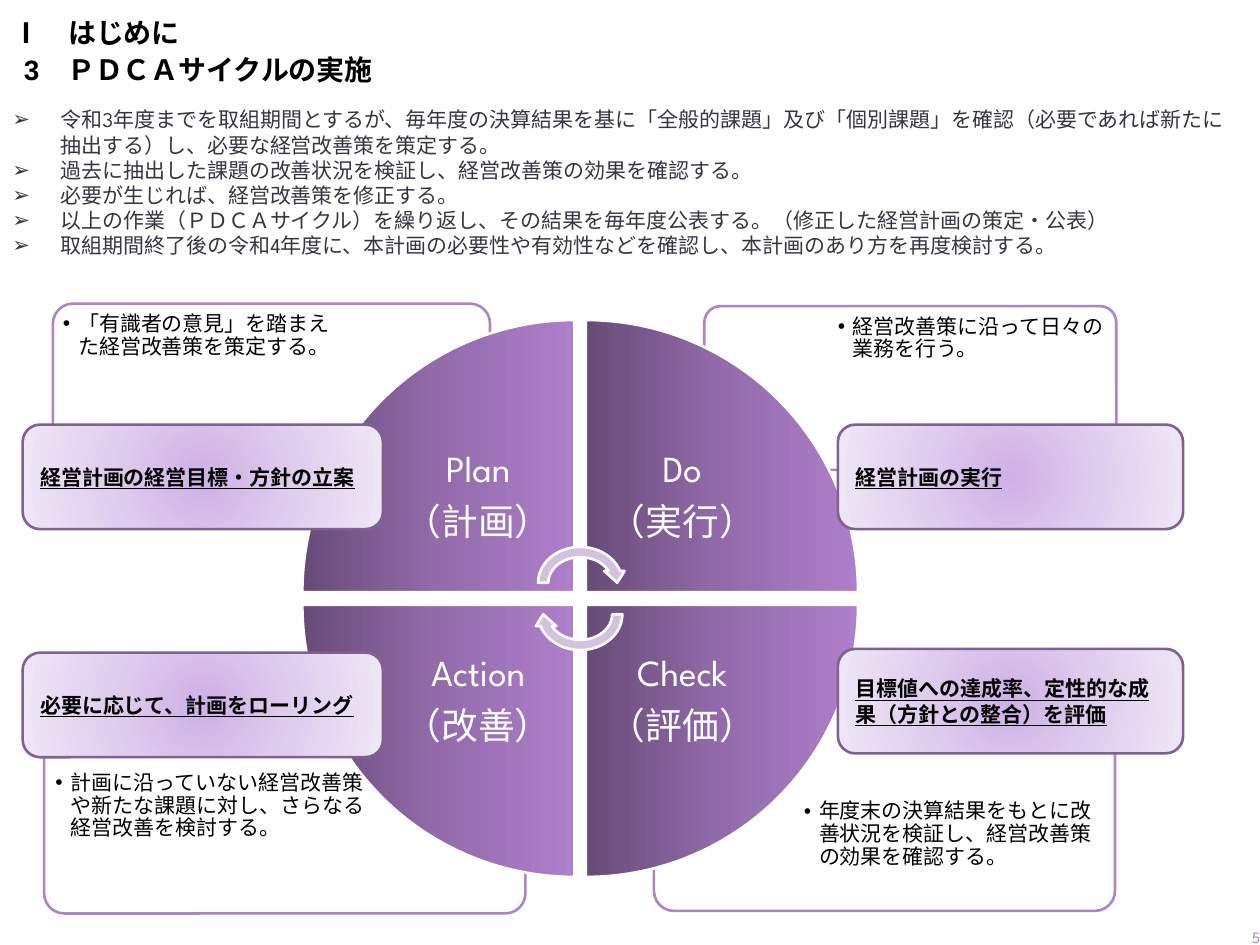
from lxml import etree
from pptx import Presentation
from pptx.dml.color import RGBColor
from pptx.enum.shapes import MSO_SHAPE
from pptx.enum.text import MSO_ANCHOR, PP_ALIGN
from pptx.oxml.ns import qn
from pptx.util import Inches, Pt

ROUNDED, WEDGE = MSO_SHAPE.ROUNDED_RECTANGLE, MSO_SHAPE.PIE_WEDGE
CYCLE_ARROW = MSO_SHAPE.CIRCULAR_ARROW
TOP, MIDDLE = MSO_ANCHOR.TOP, MSO_ANCHOR.MIDDLE
LEFT, CENTER, RIGHT = PP_ALIGN.LEFT, PP_ALIGN.CENTER, PP_ALIGN.RIGHT
JUSTIFY = PP_ALIGN.JUSTIFY

HEADING_FONT, BODY_FONT = "Arial", "League Spartan"
COLORS = {
    "black": "000000", "white": "FFFFFF", "body": "373545",
    "accent": "AD84C6", "arrow": "D3C2DF", "label_line": "806292",
}
WEDGE_STOPS = ((0, "674B78"), (50, "936BAB"), (100, "AE7FCB"))
LABEL_STOPS = ((0, "CFB0E6"), (50, "E0CEEE"), (100, "EFE7F6"))

POLICIES = [
    "令和3年度までを取組期間とするが、毎年度の決算結果を基に「全般的課題」及び「個別課題」を確認（必要であれば新たに抽出する）し、必要な経営改善策を策定する。",
    "過去に抽出した課題の改善状況を検証し、経営改善策の効果を確認する。",
    "必要が生じれば、経営改善策を修正する。",
    "以上の作業（ＰＤＣＡサイクル）を繰り返し、その結果を毎年度公表する。（修正した経営計画の策定・公表）",
    "取組期間終了後の令和4年度に、本計画の必要性や有効性などを確認し、本計画のあり方を再度検討する。",
]
# Frame box, text box, text anchor, text
DETAILS = [
    ((5.19, 5.63, 3.66, 1.6), (6.33, 6.06, 2.49, 1.13), MIDDLE,
     "年度末の決算結果をもとに改善状況を検証し、経営改善策の効果を確認する。"),
    ((0.35, 5.65, 3.82, 1.6), (0.39, 6.08, 2.6, 1.13), TOP,
     "計画に沿っていない経営改善策や新たな課題に対し、さらなる経営改善を検討する。"),
    ((5.59, 2.43, 3.27, 1.3), (6.6, 2.46, 2.23, 0.91), TOP,
     "経営改善策に沿って日々の業務を行う。"),
    ((0.42, 2.41, 3.47, 1.6), (0.45, 2.44, 2.36, 1.13), TOP,
     "「有識者の意見」を踏まえた経営改善策を策定する。"),
]
# Column, row, rotation, lines
STAGES = [
    (0, 0, 0, ("Plan", "（計画）")),
    (1, 0, 90, ("Do", "（実行）")),
    (1, 1, 180, ("Check", "（評価）")),
    (0, 1, 270, ("Action", "（改善）")),
]
LABELS = [
    ((6.65, 3.37, 2.74, 0.83), "経営計画の実行"),
    ((6.65, 5.15, 2.74, 0.83), "目標値への達成率、定性的な成果（方針との整合）を評価"),
    ((0.18, 3.37, 2.86, 0.83), "経営計画の経営目標・方針の立案"),
    ((0.18, 5.18, 2.86, 0.83), "必要に応じて、計画をローリング"),
]


def rgb(name):
    return RGBColor.from_string(COLORS[name])


def set_bullet(paragraph, char, indent):
    props = paragraph._p.get_or_add_pPr()
    props.set("marL", str(Inches(indent)))
    props.set("indent", str(-Inches(indent)))
    etree.SubElement(props, qn("a:buFont"), typeface="Arial")
    etree.SubElement(props, qn("a:buChar"), char=char)


def write(frame, lines, size, font, color, align=LEFT, anchor=TOP, inset=None,
          bold=False, underline=False, spacing=None, after=0, bullet=None):
    frame.word_wrap = True
    frame.vertical_anchor = anchor
    if inset is not None:
        frame.margin_left = frame.margin_right = Inches(inset)
        frame.margin_top = frame.margin_bottom = Inches(inset)
    for i, line in enumerate(lines):
        paragraph = frame.add_paragraph() if i else frame.paragraphs[0]
        paragraph.alignment = align
        paragraph.space_after = Pt(after)
        if spacing:
            paragraph.line_spacing = spacing
        if bullet:
            set_bullet(paragraph, *bullet)
        run = paragraph.add_run()
        run.text = line
        run.font.size, run.font.name = Pt(size), font
        run.font.bold, run.font.underline = bold, underline
        run.font.color.rgb = rgb(color)


def add_text(slide, box, lines, size, font, color, **style):
    textbox = slide.shapes.add_textbox(*map(Inches, box))
    write(textbox.text_frame, lines, size, font, color, **style)


def add_outlined(slide, kind, box, line, fill="white", rotation=0):
    shape = slide.shapes.add_shape(kind, *map(Inches, box))
    shape.shadow.inherit = False
    shape.rotation = rotation
    shape.fill.solid()
    shape.fill.fore_color.rgb = rgb(fill)
    shape.line.color.rgb = rgb(line)
    shape.line.width = Pt(1.5)
    return shape


def set_gradient(shape, stops, radial=False):
    gradient = etree.Element(qn("a:gradFill"), rotWithShape="0")
    stop_list = etree.SubElement(gradient, qn("a:gsLst"))
    for percent, color in stops:
        stop = etree.SubElement(stop_list, qn("a:gs"), pos=str(percent * 1000))
        etree.SubElement(stop, qn("a:srgbClr"), val=color)
    if radial:
        center = etree.SubElement(gradient, qn("a:path"), attrib={"path": "circle"})
        sides = dict.fromkeys("ltrb", "50000")
        etree.SubElement(center, qn("a:fillToRect"), attrib=sides)
    else:
        etree.SubElement(gradient, qn("a:lin"), ang="0", scaled="0")
    props = shape._element.spPr
    props.replace(props.find(qn("a:solidFill")), gradient)


def add_detail(slide, frame_box, text_box, anchor, text):
    frame = add_outlined(slide, ROUNDED, frame_box, "accent")
    frame.adjustments[0] = 0.1
    white = frame._element.spPr.find(qn("a:solidFill"))[0]
    etree.SubElement(white, qn("a:alpha"), val="90000")
    add_text(slide, text_box, [text], 12, BODY_FONT, "black", anchor=anchor,
             inset=0.05, spacing=0.9, bullet=("•", 0.12))


def add_stage(slide, column, row, rotation, lines):
    box = (2.4 + 2.25 * column, 2.54 + 2.26 * row, 2.16, 2.16)
    wedge = add_outlined(slide, WEDGE, box, "white", rotation=rotation)
    set_gradient(wedge, WEDGE_STOPS)
    text_box = (3.03 + 1.62 * column, 3.18 + 1.62 * row, 1.53, 1.53)
    add_text(slide, text_box, lines, 21, BODY_FONT, "white", align=CENTER,
             anchor=MIDDLE, inset=0.16, spacing=0.9, after=7.35)


def add_label(slide, box, text):
    label = add_outlined(slide, ROUNDED, box, "label_line")
    set_gradient(label, LABEL_STOPS, radial=True)
    write(label.text_frame, [text], 12, HEADING_FONT, "black",
          anchor=MIDDLE, bold=True, underline=True)


def main():
    prs = Presentation()
    prs.slide_width, prs.slide_height = Inches(10), Inches(7.5)
    slide = prs.slides.add_slide(prs.slide_layouts[6])

    # Headings and policy list
    add_text(slide, (0, 0.07, 8.62, 0.38), ["Ⅰ　はじめに"], 16,
             HEADING_FONT, "black", anchor=MIDDLE, bold=True)
    add_text(slide, (0.09, 0.37, 8.62, 0.36), ["3　ＰＤＣＡサイクルの実施"], 16,
             HEADING_FONT, "black", bold=True)
    add_text(slide, (0, 0.8, 9.82, 1.31), POLICIES, 12, BODY_FONT, "body",
             align=JUSTIFY, bullet=("➢", 0.38))

    # PDCA cycle, with details behind and labels in front
    for detail in DETAILS:
        add_detail(slide, *detail)
    for stage in STAGES:
        add_stage(slide, *stage)
    for top, rotation in ((4.3, 0), (4.55, 180)):
        add_outlined(slide, CYCLE_ARROW, (4.23, top, 0.75, 0.65), "white",
                     fill="arrow", rotation=rotation)
    for label in LABELS:
        add_label(slide, *label)

    # Page number
    add_text(slide, (9.54, 7.24, 0.56, 0.4), ["5"], 9, BODY_FONT, "accent",
             align=RIGHT, anchor=MIDDLE)
    prs.save("out.pptx")


if __name__ == "__main__":
    main()
